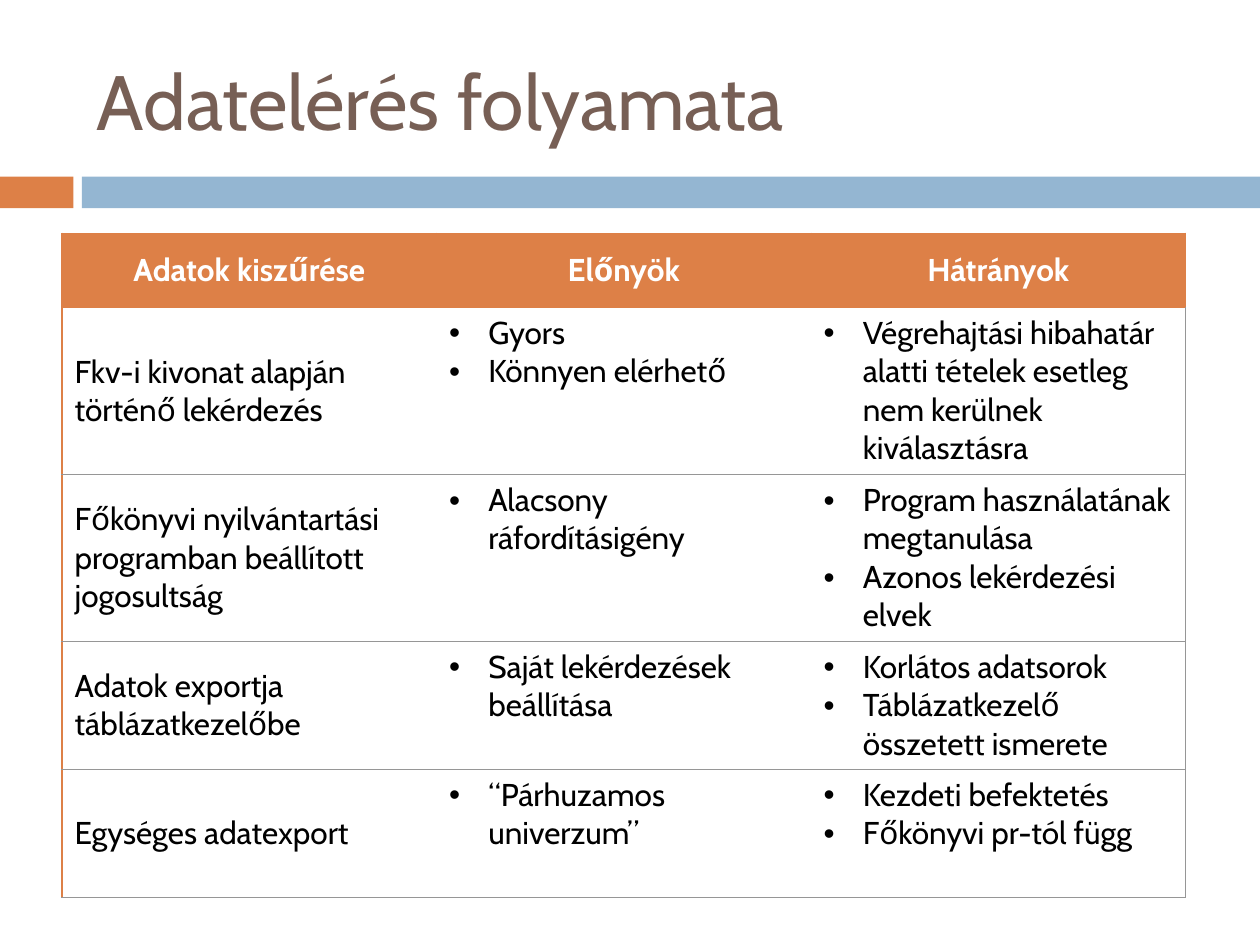
from lxml import etree
from pptx import Presentation, util as u
from pptx.dml.color import RGBColor
from pptx.enum import shapes, text
from pptx.oxml.ns import qn

ORANGE, BLUE, BROWN, GRAY = "DD8047", "94B6D2", "775F55", "969696"
BLACK, WHITE = "000000", "FFFFFF"

HEADS = ["Adatok kiszűrése", "Előnyök", "Hátrányok"]
ROWS = [
    ("Fkv-i kivonat alapján történő lekérdezés",
     ["Gyors", "Könnyen elérhető"],
     ["Végrehajtási hibahatár alatti tételek esetleg nem kerülnek kiválasztásra"]),
    ("Főkönyvi nyilvántartási programban beállított jogosultság",
     ["Alacsony ráfordításigény"],
     ["Program használatának megtanulása", "Azonos lekérdezési elvek"]),
    ("Adatok exportja táblázatkezelőbe",
     ["Saját lekérdezések beállítása"],
     ["Korlátos adatsorok", "Táblázatkezelő összetett ismerete"]),
    ("Egységes adatexport",
     ["“Párhuzamos univerzum”"],
     ["Kezdeti befektetés", "Főkönyvi pr-tól függ"]),
]
HIGHS = [1.5, 4.23 - 0.86, 3.36, 2.58, 2.58]


def paint(fmt, hue):
    """Give a fill or font colour a hex value."""
    fmt.rgb = RGBColor.from_string(hue)


def fill(item, hue):
    item.fill.solid()
    paint(item.fill.fore_color, hue)


def write(frame, lines, size=18, hue=BLACK, bold=False, align=text.PP_ALIGN.LEFT,
          anchor=text.MSO_ANCHOR.MIDDLE, dots=False):
    """Put one paragraph per line into a text frame."""
    frame.word_wrap = True
    frame.vertical_anchor = anchor
    for i, line in enumerate(lines):
        para = frame.add_paragraph() if i else frame.paragraphs[0]
        para.alignment = align
        run = para.add_run()
        run.text = line
        run.font.name, run.font.size, run.font.bold = "Cabin", u.Pt(size), bold
        paint(run.font.color, hue)
        if dots:
            prop = para._p.get_or_add_pPr()
            prop.set("marL", str(u.Cm(0.79)))
            prop.set("indent", str(-u.Cm(0.79)))
            etree.SubElement(prop, qn("a:buFont"), typeface="Arial")
            etree.SubElement(prop, qn("a:buChar"), char="•")


def edge(cell, **hues):
    """Set the cell borders L, R, T and B; a side not named has no line."""
    prop = cell._tc.get_or_add_tcPr()
    for i, side in enumerate("LRTB"):
        line = etree.Element(qn("a:ln" + side), w=str(u.Pt(0.79)))
        if side in hues:
            solid = etree.SubElement(line, qn("a:solidFill"))
            etree.SubElement(solid, qn("a:srgbClr"), val=hues[side])
        else:
            etree.SubElement(line, qn("a:noFill"))
        prop.insert(i, line)


class Deck:
    def __init__(self):
        self.prs = Presentation()
        self.prs.slide_width, self.prs.slide_height = u.Cm(25.4), u.Cm(19.05)
        self.slide = self.prs.slides.add_slide(self.prs.slide_layouts[5])

    def title(self, words, *box):
        head = self.slide.shapes.title
        head.left, head.top, head.width, head.height = map(u.Cm, box)
        write(head.text_frame, [words], size=44, hue=BROWN)
        head.text_frame.auto_size = text.MSO_AUTO_SIZE.NONE

    def bar(self, hue, *box):
        bar = self.slide.shapes.add_shape(shapes.MSO_SHAPE.RECTANGLE, *map(u.Cm, box))
        bar.shadow.inherit = False
        fill(bar, hue)
        bar.line.fill.background()

    def table(self, heads, rows, highs, left, top, wide):
        grid = self.slide.shapes.add_table(
            len(rows) + 1, len(heads), u.Cm(left), u.Cm(top),
            u.Cm(wide * len(heads)), u.Cm(sum(highs))).table
        grid.horz_banding = False
        for col in grid.columns:
            col.width = u.Cm(wide)
        for row, high in zip(grid.rows, highs):
            row.height = u.Cm(high)
        # Header row
        for c, word in enumerate(heads):
            cell = grid.cell(0, c)
            fill(cell, ORANGE)
            self.cell(cell, [word], hue=WHITE, bold=True, align=text.PP_ALIGN.CENTER)
            edge(cell, **{side: ORANGE for side in "LRTB"})
        # Body rows: a plain label, then two bulleted lists
        for r, (label, *lists) in enumerate(rows, 1):
            for c, lines in enumerate([[label], *lists]):
                cell = grid.cell(r, c)
                fill(cell, WHITE)
                if c:
                    self.cell(cell, lines, anchor=text.MSO_ANCHOR.TOP, dots=True)
                else:
                    self.cell(cell, lines)
                sides = {"T": ORANGE if r == 1 else GRAY, "B": GRAY}
                if c == 0:
                    sides["L"] = ORANGE
                if c == len(heads) - 1:
                    sides["R"] = GRAY
                edge(cell, **sides)

    def cell(self, cell, lines, anchor=text.MSO_ANCHOR.MIDDLE, **style):
        write(cell.text_frame, lines, **style)
        cell.vertical_anchor = anchor


def main():
    deck = Deck()
    # Band under the title
    deck.bar(ORANGE, 0, 3.56, 1.48, 0.64)
    deck.bar(BLUE, 1.65, 3.56, 23.75, 0.64)
    deck.title("Adatelérés folyamata", 1.7, 0.64, 22.66, 2.74)
    # Comparison table
    deck.table(HEADS, ROWS, HIGHS, left=1.25, top=4.7, wide=7.55)
    deck.prs.save("out.pptx")


if __name__ == "__main__":
    main()
